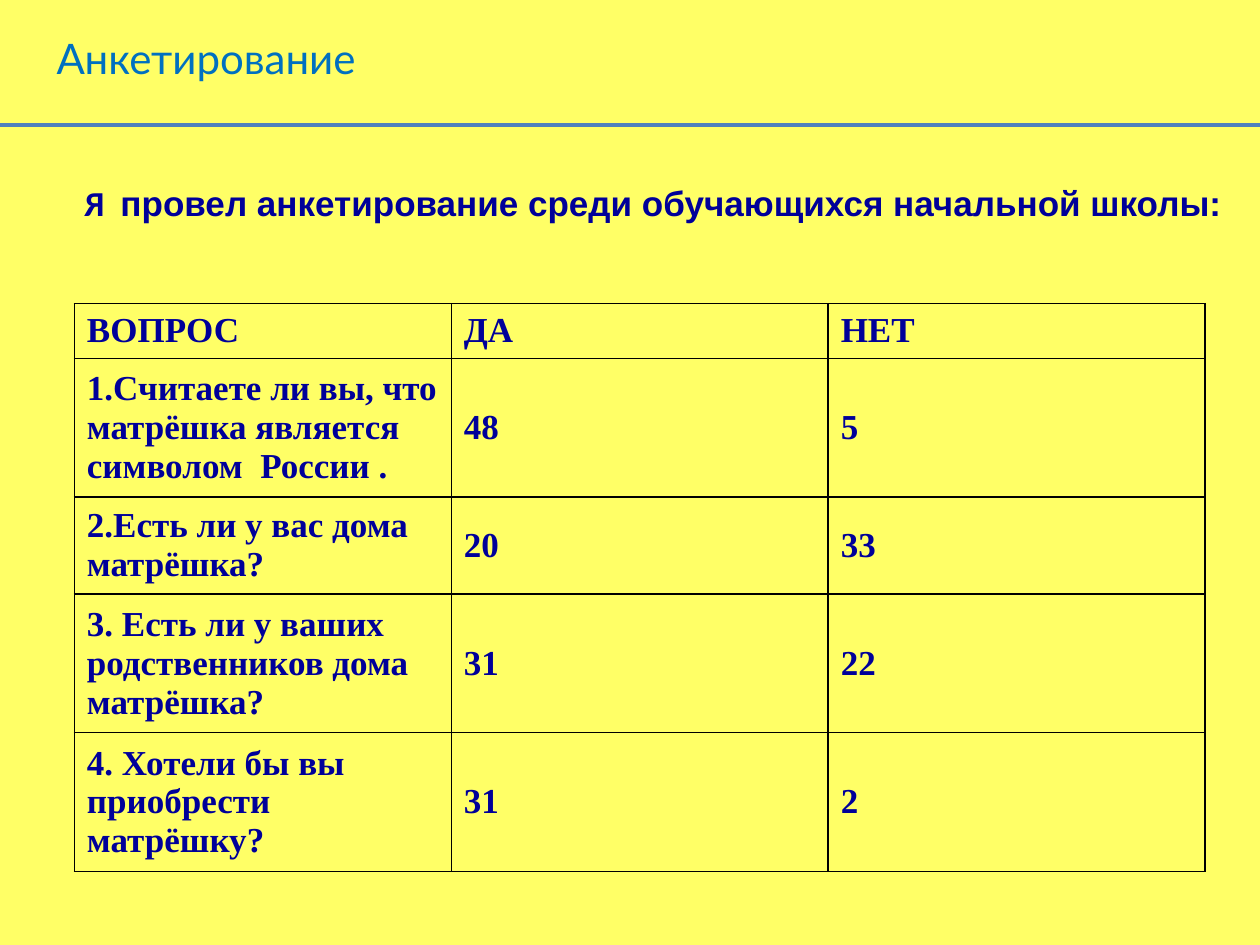
"""Build the survey slide: title, rule, introduction and table of answers."""
from dataclasses import dataclass

from lxml.etree import SubElement
from pptx import Presentation
from pptx.dml.color import RGBColor
from pptx.enum.shapes import MSO_CONNECTOR
from pptx.enum.text import MSO_ANCHOR, PP_ALIGN
from pptx.oxml.ns import qn
from pptx.util import Pt


@dataclass(frozen=True)
class Theme:
    background: str = "FFFF66"
    title: str = "0070C0"
    ink: str = "000099"
    rule: str = "4F81BD"
    border: str = "000000"
    title_size: float = 24
    body_size: float = 20


@dataclass(frozen=True)
class Answer:
    question: str
    yes: str
    no: str
    height: float


THEME = Theme()
LEFT, WIDTH = 25.2, 694.8
COLUMN_WIDTH = 215.4
ONE_LINE, TWO_LINES, THREE_LINES = 31, 55.4, 79.2
ANSWERS = [
    Answer("ВОПРОС", "ДА", "НЕТ", ONE_LINE),
    Answer("1.Считаете ли вы, что матрёшка является символом  России .", "48", "5", THREE_LINES),
    Answer("2.Есть ли у вас дома матрёшка?", "20", "33", TWO_LINES),
    Answer("3. Есть ли у ваших родственников дома матрёшка?", "31", "22", THREE_LINES),
    Answer("4. Хотели бы вы приобрести матрёшку?", "31", "2", THREE_LINES),
]


def write(paragraph, text: str, *, font: str, size: float = THEME.body_size,
          color: str = THEME.ink, bold: bool = True) -> None:
    run = paragraph.add_run()
    run.text = text
    run.font.name = font
    run.font.size = Pt(size)
    run.font.bold = bold
    run.font.color.rgb = RGBColor.from_string(color)


def add_line_of_text(slide, top: float, height: float, anchor: MSO_ANCHOR):
    frame = slide.shapes.add_textbox(Pt(LEFT), Pt(top), Pt(WIDTH), Pt(height)).text_frame
    frame.word_wrap = True
    frame.vertical_anchor = anchor
    return frame.paragraphs[0]


def add_rule(slide, top: float, length: int) -> None:
    rule = slide.shapes.add_connector(MSO_CONNECTOR.STRAIGHT, 0, Pt(top), length, Pt(top))
    rule.line.color.rgb = RGBColor.from_string(THEME.rule)
    rule.line.width = Pt(2)
    SubElement(rule._element.spPr, qn("a:effectLst"))


def outline(cell) -> None:
    properties = cell._tc.get_or_add_tcPr()
    for position, side in enumerate(("a:lnL", "a:lnR", "a:lnT", "a:lnB")):
        edge = SubElement(properties, qn(side), w=str(Pt(1)))
        fill = SubElement(edge, qn("a:solidFill"))
        SubElement(fill, qn("a:srgbClr"), val=THEME.border)
        properties.insert(position, edge)


def add_answers(slide, answers: list[Answer], left: float, top: float) -> None:
    total_height = sum(answer.height for answer in answers)
    table = slide.shapes.add_table(len(answers), 3, Pt(left), Pt(top),
                                   Pt(3 * COLUMN_WIDTH), Pt(total_height)).table
    table.first_row = table.horz_banding = False
    for column in table.columns:
        column.width = Pt(COLUMN_WIDTH)
    for row, answer in zip(table.rows, answers):
        row.height = Pt(answer.height)
        for cell, text in zip(row.cells, (answer.question, answer.yes, answer.no)):
            cell.fill.background()
            cell.vertical_anchor = MSO_ANCHOR.MIDDLE
            outline(cell)
            write(cell.text_frame.paragraphs[0], text, font="Times New Roman")


def main() -> None:
    deck = Presentation()
    deck.slide_width, deck.slide_height = Pt(720), Pt(540)
    slide = deck.slides.add_slide(deck.slide_layouts[6])
    slide.background.fill.solid()
    slide.background.fill.fore_color.rgb = RGBColor.from_string(THEME.background)

    add_rule(slide, 71.3, deck.slide_width)
    title = add_line_of_text(slide, 15.1, 36, MSO_ANCHOR.TOP)
    write(title, "Анкетирование", font="Lato", size=THEME.title_size,
          color=THEME.title, bold=False)

    introduction = add_line_of_text(slide, 100.1, 31, MSO_ANCHOR.MIDDLE)
    introduction.alignment = PP_ALIGN.JUSTIFY
    introduction._p.get_or_add_pPr().set("indent", str(Pt(16)))
    write(introduction, "Я  ", font="Calibri")
    write(introduction, "провел анкетирование среди обучающихся начальной школы:", font="Arial")

    add_answers(slide, ANSWERS, 42.5, 173.5)
    deck.save("out.pptx")


if __name__ == "__main__":
    main()
